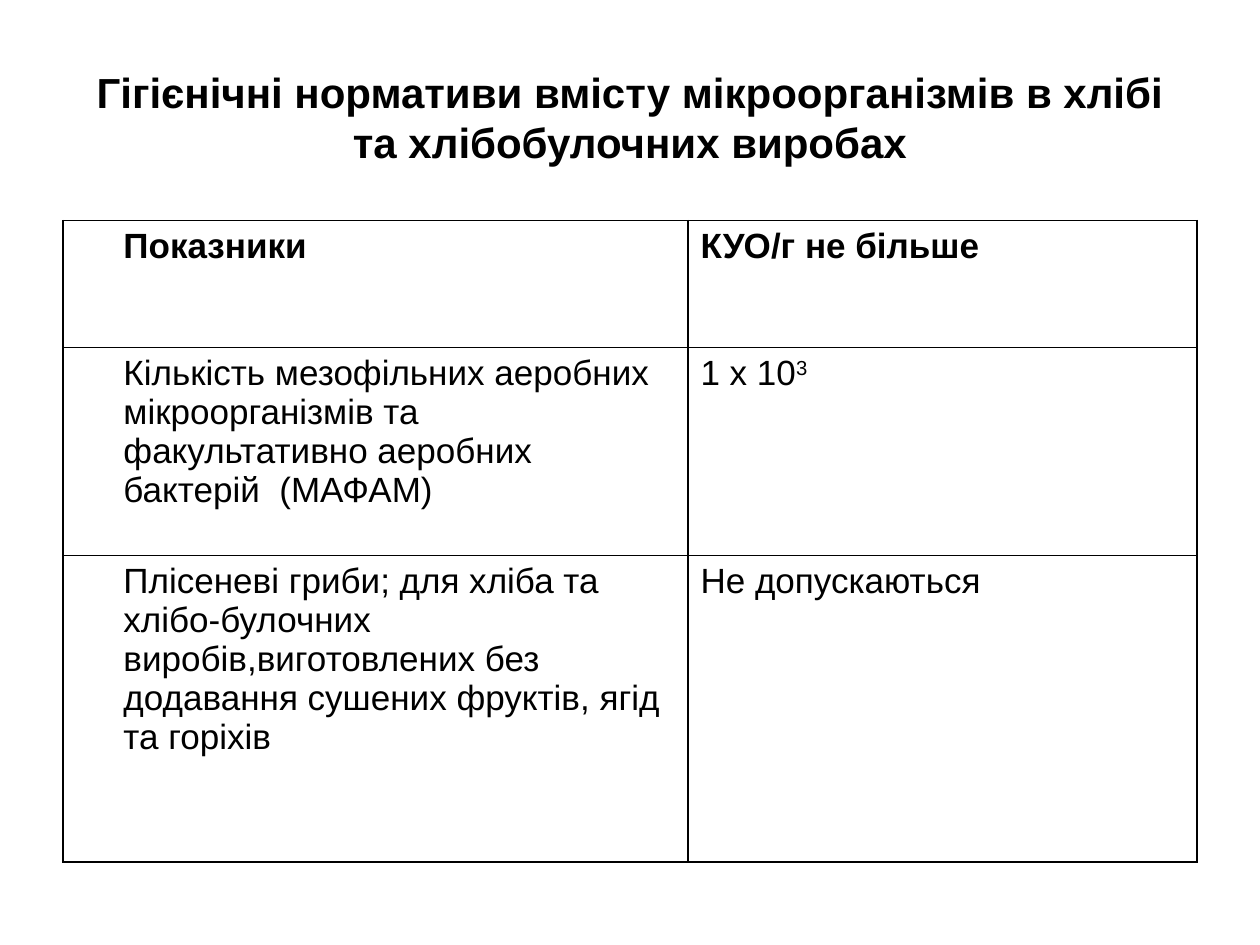
import pptx
import pptx.util
import pptx.dml.color
import pptx.enum.text
import pptx.oxml
import pptx.oxml.ns


def tint(code):
    return pptx.dml.color.RGBColor.from_string(code)


class Deck:
    face = "Arial"
    ink = "000000"
    page = "FFFFFF"
    wide, high = 10, 7.5

    def __init__(self):
        self.file = pptx.Presentation()
        self.file.slide_width = pptx.util.Inches(self.wide)
        self.file.slide_height = pptx.util.Inches(self.high)
        self.slide = self.file.slides.add_slide(self.file.slide_layouts[5])

    def box(self, x, y, w, h):
        return [pptx.util.Inches(n) for n in
                (x * self.wide, y * self.high, w * self.wide, h * self.high)]

    def run(self, para, text, size, bold=False, lift=0):
        run = para.add_run()
        run.text = text
        font = run.font
        font.name, font.size, font.bold = self.face, pptx.util.Pt(size), bold
        font.color.rgb = tint(self.ink)
        if lift:
            run._r.get_or_add_rPr().set("baseline", str(lift * 1000))

    def title(self, text, *area):
        shape = self.slide.shapes.title
        shape.left, shape.top, shape.width, shape.height = self.box(*area)
        frame = shape.text_frame
        frame.word_wrap = True
        frame.vertical_anchor = pptx.enum.text.MSO_ANCHOR.MIDDLE
        para = frame.paragraphs[0]
        para.alignment = pptx.enum.text.PP_ALIGN.CENTER
        self.run(para, text, 24, True)

    def edge(self, cell):
        props = cell._tc.get_or_add_tcPr()
        for n, side in enumerate(("lnL", "lnR", "lnT", "lnB")):
            line = pptx.oxml.parse_xml(
                f'<a:{side} {pptx.oxml.ns.nsdecls("a")} w="12700">'
                f'<a:solidFill><a:srgbClr val="{self.ink}"/></a:solidFill>'
                f'</a:{side}>')
            props.insert(n, line)

    def cell(self, cell, runs, bold, inset):
        cell.fill.solid()
        cell.fill.fore_color.rgb = tint(self.page)
        self.edge(cell)
        para = cell.text_frame.paragraphs[0]
        props = para._p.get_or_add_pPr()
        props.set("marL", str(pptx.util.Inches(inset)))
        props.set("indent", "0")
        for text, lift in runs:
            self.run(para, text, 20, bold, lift)

    def table(self, rows, cols, highs, x, y):
        area = self.box(x, y, sum(cols) / self.wide, sum(highs) / self.high)
        grid = self.slide.shapes.add_table(len(rows), len(cols), *area).table
        grid.horz_banding = False
        for col, size in zip(grid.columns, cols):
            col.width = pptx.util.Inches(size)
        for row, size in zip(grid.rows, highs):
            row.height = pptx.util.Inches(size)
        for r, row in enumerate(rows):
            for c, runs in enumerate(row):
                self.cell(grid.cell(r, c), runs, r == 0, 0 if c else 0.38)

    def save(self):
        self.file.save("out.pptx")


def main():
    deck = Deck()
    deck.title("Гігієнічні нормативи вмісту мікроорганізмів в хлібі "
               "та хлібобулочних виробах", 0.05, 0.04, 0.9, 1 / 6)
    rows = [
        [[("Показники", 0)], [("КУО/г не більше", 0)]],
        [[("Кількість мезофільних аеробних мікроорганізмів та  "
           "факультативно аеробних бактерій  (МАФАМ)", 0)],
         [("1 х 10", 0), ("3", 30)]],
        [[("Плісеневі гриби; для хліба та хлібо-булочних "
           "виробів,виготовлених без додавання сушених фруктів, "
           "ягід та горіхів", 0)],
         [("Не допускаються", 0)]],
    ]
    deck.table(rows, [4.96, 4.04], [1.01, 1.65, 2.43], 0.05, 1.75 / 7.5)
    deck.save()


if __name__ == "__main__":
    main()
